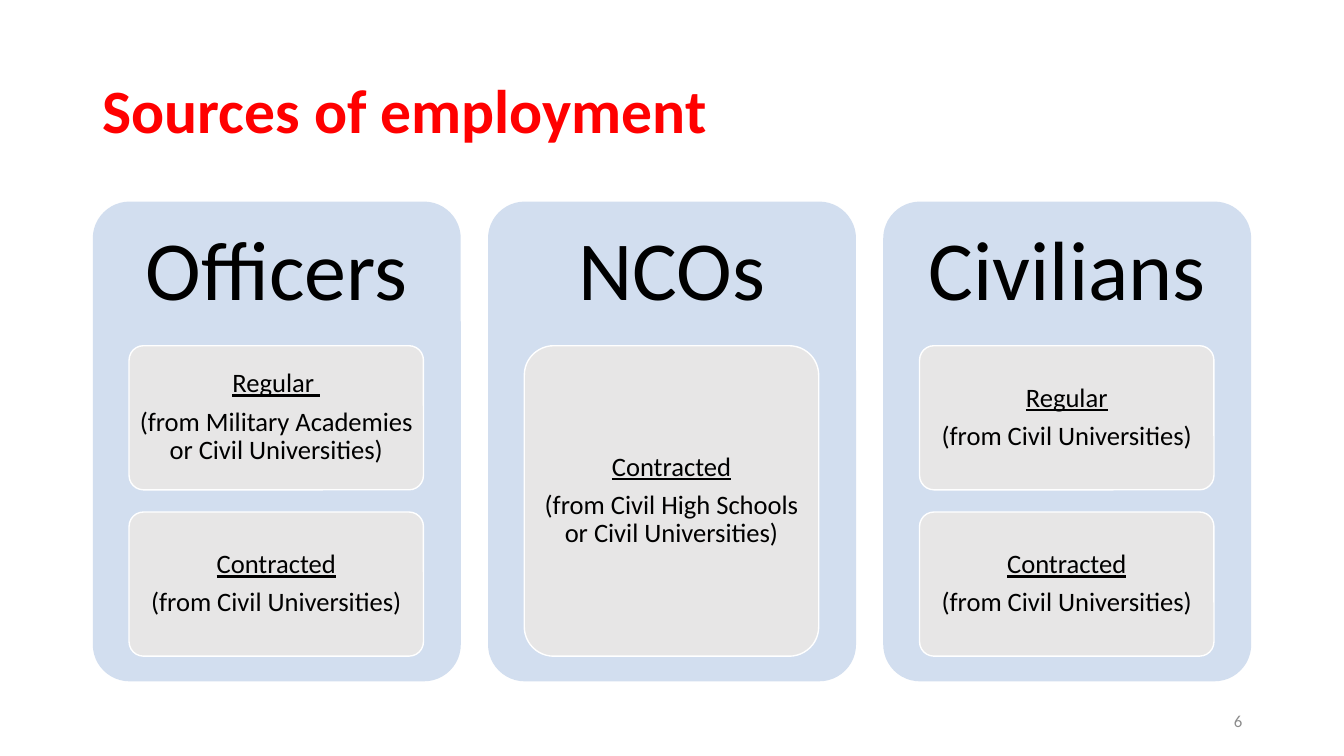
from pptx import Presentation
from pptx.dml.color import RGBColor
from pptx.enum.shapes import MSO_SHAPE
from pptx.enum.text import MSO_ANCHOR, PP_ALIGN
from pptx.util import Inches, Pt

ROUNDED = MSO_SHAPE.ROUNDED_RECTANGLE
MIDDLE = MSO_ANCHOR.MIDDLE
LEFT, CENTER, RIGHT = PP_ALIGN.LEFT, PP_ALIGN.CENTER, PP_ALIGN.RIGHT

RED = RGBColor(0xFF, 0x00, 0x00)
BLACK = RGBColor(0x00, 0x00, 0x00)
WHITE = RGBColor(0xFF, 0xFF, 0xFF)
GRAY = RGBColor(0x8C, 0x8C, 0x8C)
PANEL_BLUE = RGBColor(0xD2, 0xDE, 0xEF)
CARD_GRAY = RGBColor(0xE7, 0xE6, 0xE6)

PANEL_LEFT, PANEL_TOP, PANEL_W, PANEL_H = 0.92, 2, 3.65, 4.76
PANEL_GAP = 0.27
HEADING_H = 1.43
CARD_INSET, CARD_TOP, CARD_W = 0.36, 3.43, 2.92
CARDS_H, CARD_GAP = 3.08, 0.22

SOURCES = [
    ("Officers", [
        ("Regular ", "(from Military Academies or Civil Universities)"),
        ("Contracted", "(from Civil Universities)"),
    ]),
    ("NCOs", [
        ("Contracted", "(from Civil High Schools or Civil Universities)"),
    ]),
    ("Civilians", [
        ("Regular", "(from Civil Universities)"),
        ("Contracted", "(from Civil Universities)"),
    ]),
]


class SlideBuilder:
    font = "Calibri"

    def __init__(self, slide):
        self.s = slide

    def frame(self, sp, inset_x, inset_y):
        tf = sp.text_frame
        tf.word_wrap = True
        tf.vertical_anchor = MIDDLE
        tf.margin_left = tf.margin_right = Inches(inset_x)
        tf.margin_top = tf.margin_bottom = Inches(inset_y)
        return tf

    def add_text(self, p, text, size, color, align, spacing=0.9, after=0,
                 bold=False, underline=False):
        p.alignment = align
        p.line_spacing = spacing
        p.space_after = Pt(after)
        r = p.add_run()
        r.text = text
        r.font.name = self.font
        r.font.size = Pt(size)
        r.font.color.rgb = color
        r.font.bold = bold
        r.font.underline = underline

    def text_box(self, x, y, w, h, text, size, color, align, inset_x=0.1,
                 inset_y=0.05, **style):
        sp = self.s.shapes.add_textbox(Inches(x), Inches(y), Inches(w), Inches(h))
        tf = self.frame(sp, inset_x, inset_y)
        self.add_text(tf.paragraphs[0], text, size, color, align, **style)

    def box(self, x, y, w, h, fill, line=None):
        sp = self.s.shapes.add_shape(ROUNDED, Inches(x), Inches(y), Inches(w), Inches(h))
        sp.adjustments[0] = 0.1
        sp.shadow.inherit = False
        sp.fill.solid()
        sp.fill.fore_color.rgb = fill
        if line is None:
            sp.line.fill.background()
        else:
            sp.line.color.rgb = line
            sp.line.width = Pt(1)
        return sp

    def card(self, x, y, h, kind, origin):
        sp = self.box(x, y, CARD_W, h, CARD_GRAY, WHITE)
        tf = self.frame(sp, 0.05, 0.04)
        self.add_text(tf.paragraphs[0], kind, 19, BLACK, CENTER, after=6.65, underline=True)
        self.add_text(tf.add_paragraph(), origin, 19, BLACK, CENTER, after=6.65)

    def panel(self, x, heading, cards):
        self.box(x, PANEL_TOP, PANEL_W, PANEL_H, PANEL_BLUE)
        self.text_box(x, PANEL_TOP, PANEL_W, HEADING_H, heading, 60, BLACK, CENTER,
                      inset_x=0.25, inset_y=0.25, after=21)
        h = (CARDS_H - CARD_GAP * (len(cards) - 1)) / len(cards)
        for i, (kind, origin) in enumerate(cards):
            self.card(x + CARD_INSET, CARD_TOP + i * (h + CARD_GAP), h, kind, origin)


def main():
    prs = Presentation()
    prs.slide_width = Inches(13.33)
    prs.slide_height = Inches(7.5)
    builder = SlideBuilder(prs.slides.add_slide(prs.slide_layouts[6]))
    builder.text_box(0.92, 0.4, 11.5, 1.45, "Sources of employment", 44, RED, LEFT, bold=True)
    for i, (heading, cards) in enumerate(SOURCES):
        builder.panel(PANEL_LEFT + i * (PANEL_W + PANEL_GAP), heading, cards)
    builder.text_box(9.42, 6.95, 3, 0.4, "6", 12, GRAY, RIGHT, spacing=1.0)
    prs.save("out.pptx")


if __name__ == "__main__":
    main()
